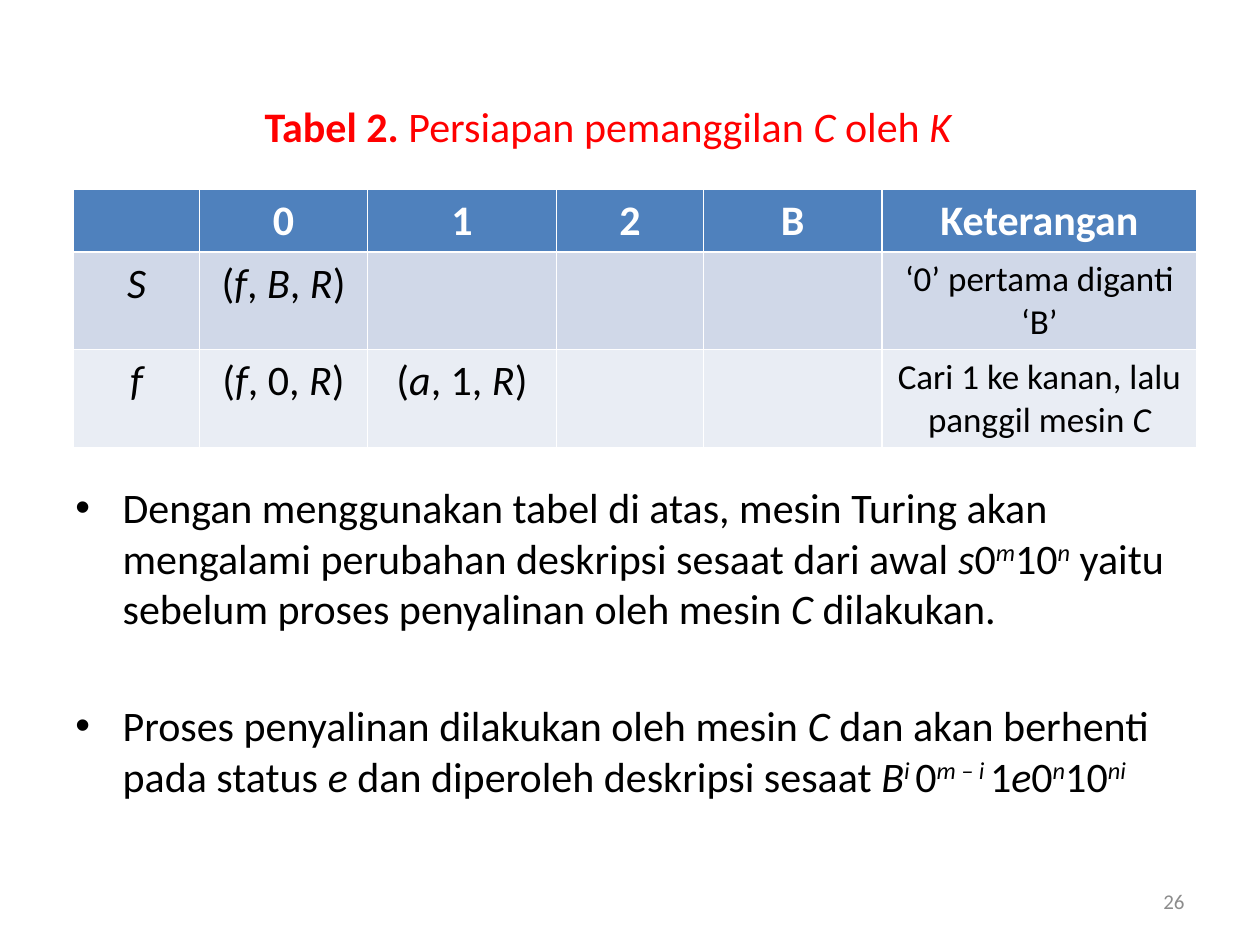
from dataclasses import dataclass
from typing import NamedTuple

from lxml import etree
from pptx import Presentation
from pptx.dml.color import RGBColor
from pptx.enum.text import MSO_ANCHOR, MSO_AUTO_SIZE, PP_ALIGN
from pptx.oxml.ns import qn
from pptx.util import Emu, Pt

LEFT, MID, RIGHT = PP_ALIGN.LEFT, PP_ALIGN.CENTER, PP_ALIGN.RIGHT
TOP, CENTRE = MSO_ANCHOR.TOP, MSO_ANCHOR.MIDDLE
GROW = MSO_AUTO_SIZE.SHAPE_TO_FIT_TEXT
TITLE_ONLY = 5
SCALE = 7620  # 120 px to the inch


@dataclass(frozen=True)
class Theme:
    face: str = "Calibri"
    ink: str = "000000"
    red: str = "FF0000"
    white: str = "FFFFFF"
    grey: str = "8C8C8C"
    head: str = "4F81BD"
    bands: tuple[str, ...] = ("D0D8E8", "E9EDF4")
    main: int = 24
    note: int = 20
    small: int = 12
    gap: int = 38


class Bit(NamedTuple):
    text: str
    look: str = ""  # b bold, i italic, ^ raised


class Box(NamedTuple):
    x: int
    y: int
    w: int
    h: int


THEME = Theme()
TITLE = Box(240, 90, 682, 60)
GRID = Box(70, 180, 1070, 246)
BODY = Box(60, 453, 1080, 330)
PAGE = Box(860, 834, 280, 48)
COLS = (120, 160, 180, 140, 170, 300)
ROWS = (60, 93, 93)
INDENT = 45

CAPTION = [Bit("Tabel 2. ", "b"), Bit("Persiapan pemanggilan "), Bit("C ", "i"),
           Bit("oleh "), Bit("K", "i")]
HEADS = ("", "0", "1", "2", "B", "Keterangan")
MOVES = [
    [[Bit("S", "i")],
     [Bit("("), Bit("f", "i"), Bit(", "), Bit("B", "i"), Bit(", "), Bit("R", "i"), Bit(")")],
     [], [], [],
     [Bit("‘0’ pertama diganti ‘B’")]],
    [[Bit("f", "i")],
     [Bit("("), Bit("f", "i"), Bit(", 0, "), Bit("R", "i"), Bit(")")],
     [Bit("("), Bit("a", "i"), Bit(", 1, "), Bit("R", "i"), Bit(")")],
     [], [],
     [Bit("Cari 1 ke kanan, lalu panggil mesin "), Bit("C", "i")]],
]
POINTS = [
    [Bit("Dengan menggunakan tabel di atas, mesin Turing akan mengalami "
         "perubahan deskripsi sesaat dari awal "),
     Bit("s", "i"), Bit("0"), Bit("m", "i^"), Bit("10"), Bit("n", "i^"),
     Bit(" yaitu sebelum proses penyalinan oleh mesin "), Bit("C ", "i"),
     Bit("dilakukan.")],
    [Bit("Proses penyalinan dilakukan oleh mesin "), Bit("C ", "i"),
     Bit("dan akan berhenti pada status "), Bit("e ", "i"),
     Bit("dan diperoleh deskripsi sesaat "),
     Bit("B", "i"), Bit("i ", "i^"), Bit("0"), Bit("m – i ", "i^"), Bit("1"),
     Bit("e", "i"), Bit("0"), Bit("n", "i^"), Bit("10"), Bit("ni", "i^")],
]


def px(count: int) -> Emu:
    return Emu(count * SCALE)


def place(box: Box) -> tuple[Emu, ...]:
    return tuple(px(side) for side in box)


def write(para, bits: list[Bit], size: int, color: str, align=LEFT) -> None:
    para.alignment = align
    para.font.size = Pt(size)
    for bit in bits:
        run = para.add_run()
        run.text = bit.text
        font = run.font
        font.name, font.size = THEME.face, Pt(size)
        font.color.rgb = RGBColor.from_string(color)
        font.bold, font.italic = "b" in bit.look, "i" in bit.look
        if "^" in bit.look:
            run.font._element.set("baseline", "30000")


def bullet(para) -> None:
    props = para._p.get_or_add_pPr()
    props.set("marL", str(px(INDENT)))
    props.set("indent", str(-px(INDENT)))
    etree.SubElement(props, qn("a:buFont")).set("typeface", "Arial")
    etree.SubElement(props, qn("a:buChar")).set("char", "•")


def add_title(slide) -> None:
    title = slide.shapes.title
    title.left, title.top, title.width, title.height = place(TITLE)
    frame = title.text_frame
    frame.word_wrap, frame.auto_size = False, GROW
    frame.vertical_anchor = TOP
    write(frame.paragraphs[0], CAPTION, THEME.main, THEME.red)


def add_text(slide, box: Box):
    frame = slide.shapes.add_textbox(*place(box)).text_frame
    frame.word_wrap = True
    return frame


def add_grid(slide) -> None:
    table = slide.shapes.add_table(len(ROWS), len(COLS), *place(GRID)).table
    for col, wide in zip(table.columns, COLS):
        col.width = px(wide)
    for row, high in zip(table.rows, ROWS):
        row.height = px(high)
    heads = [[Bit(word, "b")] if word else [] for word in HEADS]
    fills = (THEME.head, *THEME.bands)
    for r, (line, fill) in enumerate(zip([heads, *MOVES], fills)):
        for c, bits in enumerate(line):
            cell = table.cell(r, c)
            cell.fill.solid()
            cell.fill.fore_color.rgb = RGBColor.from_string(fill)
            note = r > 0 and c == len(COLS) - 1
            write(cell.text_frame.paragraphs[0], bits,
                  THEME.note if note else THEME.main,
                  THEME.ink if r else THEME.white, MID)


def add_points(slide) -> None:
    frame = add_text(slide, BODY)
    for i, bits in enumerate(POINTS):
        para = frame.add_paragraph() if i else frame.paragraphs[0]
        bullet(para)
        if i:
            para.space_before = Pt(THEME.gap)
        write(para, bits, THEME.main, THEME.ink)


def add_page(slide) -> None:
    frame = add_text(slide, PAGE)
    frame.vertical_anchor = CENTRE
    write(frame.paragraphs[0], [Bit("26")], THEME.small, THEME.grey, RIGHT)


def main() -> None:
    deck = Presentation()
    deck.slide_width, deck.slide_height = px(1200), px(900)
    slide = deck.slides.add_slide(deck.slide_layouts[TITLE_ONLY])
    add_title(slide)
    add_grid(slide)
    add_points(slide)
    add_page(slide)
    deck.save("out.pptx")


if __name__ == "__main__":
    main()
